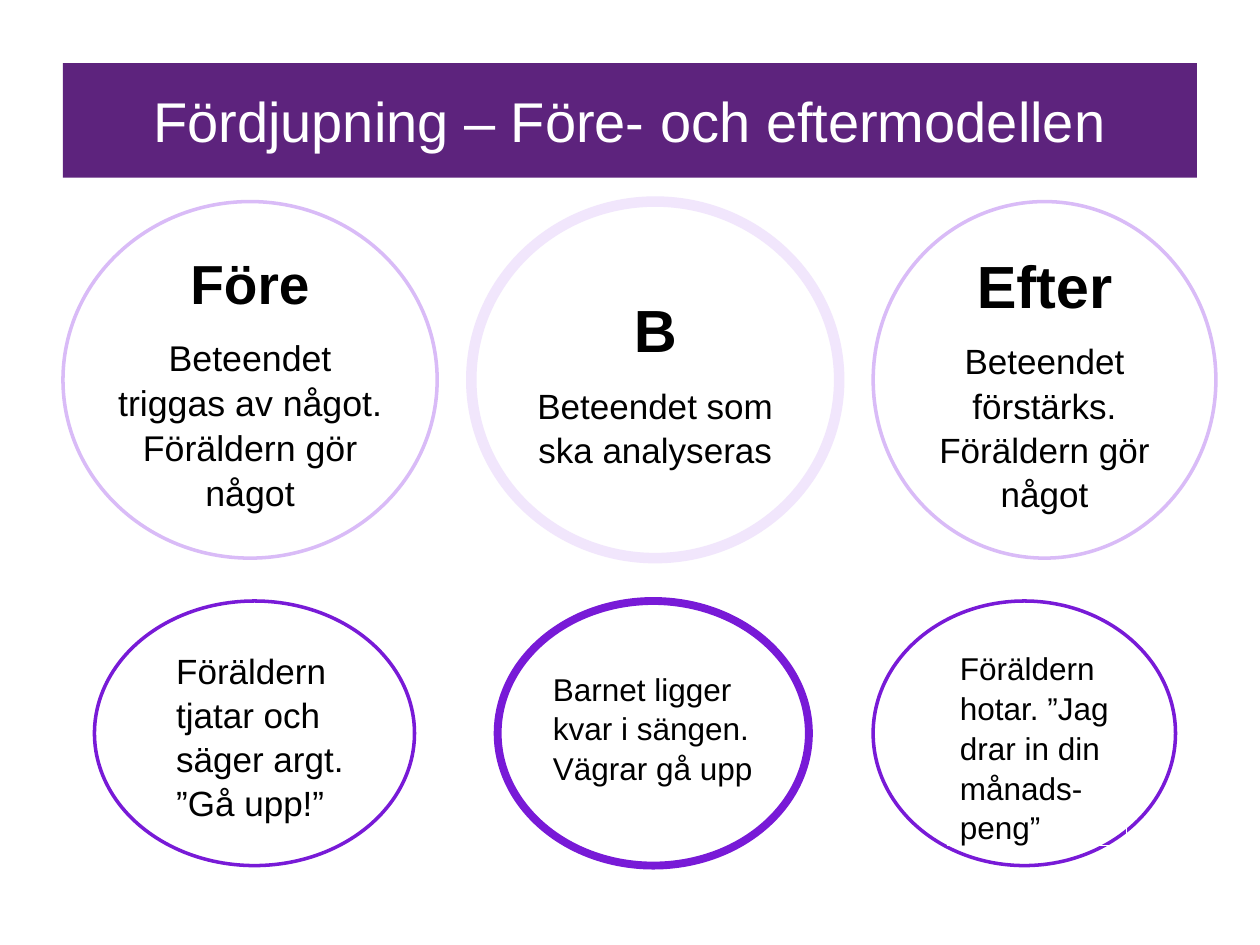
import pptx
import pptx.util
import pptx.dml.color
import pptx.enum.shapes
import pptx.enum.text

Pt = pptx.util.Pt
KIND = pptx.enum.shapes.MSO_SHAPE
ALIGN = pptx.enum.text.PP_ALIGN
ANCHOR = pptx.enum.text.MSO_ANCHOR
COLS, ROWS = 20, 15


def tint(code):
    return pptx.dml.color.RGBColor.from_string(code)


def apply(item, style):
    for name, value in style.items():
        setattr(item, name, value)


class Deck:
    font = "Arial"
    ink = "000000"
    inset = dict.fromkeys(
        ("margin_left", "margin_right", "margin_top", "margin_bottom"), 0)

    def __init__(self):
        self.file = pptx.Presentation()
        apply(self.file, {"slide_width": pptx.util.Inches(10),
                          "slide_height": pptx.util.Inches(7.5)})
        self.slide = self.file.slides.add_slide(self.file.slide_layouts[6])

    def place(self, col, row, wide, high):
        across = self.file.slide_width / COLS
        down = self.file.slide_height / ROWS
        return [round(size) for size in
                (col * across, row * down, wide * across, high * down)]

    def shape(self, kind, box, fill=None, line=None, width=1):
        item = self.slide.shapes.add_shape(kind, *self.place(*box))
        item.shadow.inherit = False
        if fill:
            item.fill.solid()
            item.fill.fore_color.rgb = tint(fill)
        else:
            item.fill.background()
        if line:
            item.line.color.rgb = tint(line)
            item.line.width = Pt(width)
        else:
            item.line.fill.background()
        return item

    def label(self, item, lines, align, anchor, frame=None, color=ink, lead=1.05):
        body = item.text_frame
        apply(body, {"word_wrap": True, "vertical_anchor": anchor, **(frame or {})})
        for rank, (text, size, bold) in enumerate(lines):
            para = body.paragraphs[0] if rank == 0 else body.add_paragraph()
            apply(para, {"alignment": align, "line_spacing": lead})
            if rank:
                para.space_before = Pt(size * 0.2)
            if rank < len(lines) - 1:
                para.space_after = Pt(6)
            run = para.add_run()
            run.text = text
            apply(run.font, {"name": self.font, "size": Pt(size), "bold": bold})
            run.font.color.rgb = tint(color)

    def title(self, box, text):
        item = self.shape(KIND.RECTANGLE, box, fill="5D237D")
        self.label(item, [(text, 32, False)], ALIGN.CENTER, ANCHOR.MIDDLE,
                   self.inset, "FFFFFF", 1)

    def phase(self, box, line, width, head, text, big, small):
        item = self.shape(KIND.OVAL, box, line=line, width=width)
        self.label(item, [(head, big, True), (text, small, False)],
                   ALIGN.CENTER, ANCHOR.MIDDLE, self.inset)

    def ring(self, box, width):
        self.shape(KIND.OVAL, box, line="781AD7", width=width)

    def note(self, box, text, size, line=None):
        if line:
            item = self.shape(KIND.RECTANGLE, box, line=line, width=0.75)
        else:
            item = self.slide.shapes.add_textbox(*self.place(*box))
        self.label(item, [(text, size, False)], ALIGN.LEFT, ANCHOR.TOP)


def main():
    deck = Deck()
    deck.title((1, 1, 18, 1.82), "Fördjupning – Före- och eftermodellen")

    phases = [
        (1, 5.94, "D9BBF7", 2, "Före",
         "Beteendet triggas av något. Föräldern gör något", 31.4, 20.4),
        (7.48, 5.84, "F1E6FC", 6, "B", "Beteendet som ska analyseras", 34, 20),
        (13.86, 5.44, "D9BBF7", 2, "Efter",
         "Beteendet förstärks. Föräldern gör något", 34, 20),
    ]
    for col, wide, *rest in phases:
        deck.phase((col, 3.2, wide, 5.66), *rest)

    for col, wide, width in [(1.5, 5.08, 2), (7.9, 4.94, 4.5), (13.86, 4.8, 2)]:
        deck.ring((col, 9.54, wide, 4.2), width)

    deck.note((2.6, 10.18, 3.46, 2.9),
              "Föräldern tjatar och säger argt. ”Gå upp!”", 20)
    deck.note((8.58, 10.5, 3.96, 2.02),
              "Barnet ligger kvar i sängen. Vägrar gå upp", 18)
    deck.note((15.04, 10.18, 2.84, 3.24),
              "Föräldern hotar. ”Jag drar in din månads-peng”", 18, "FFFFFF")
    deck.file.save("out.pptx")


if __name__ == "__main__":
    main()
